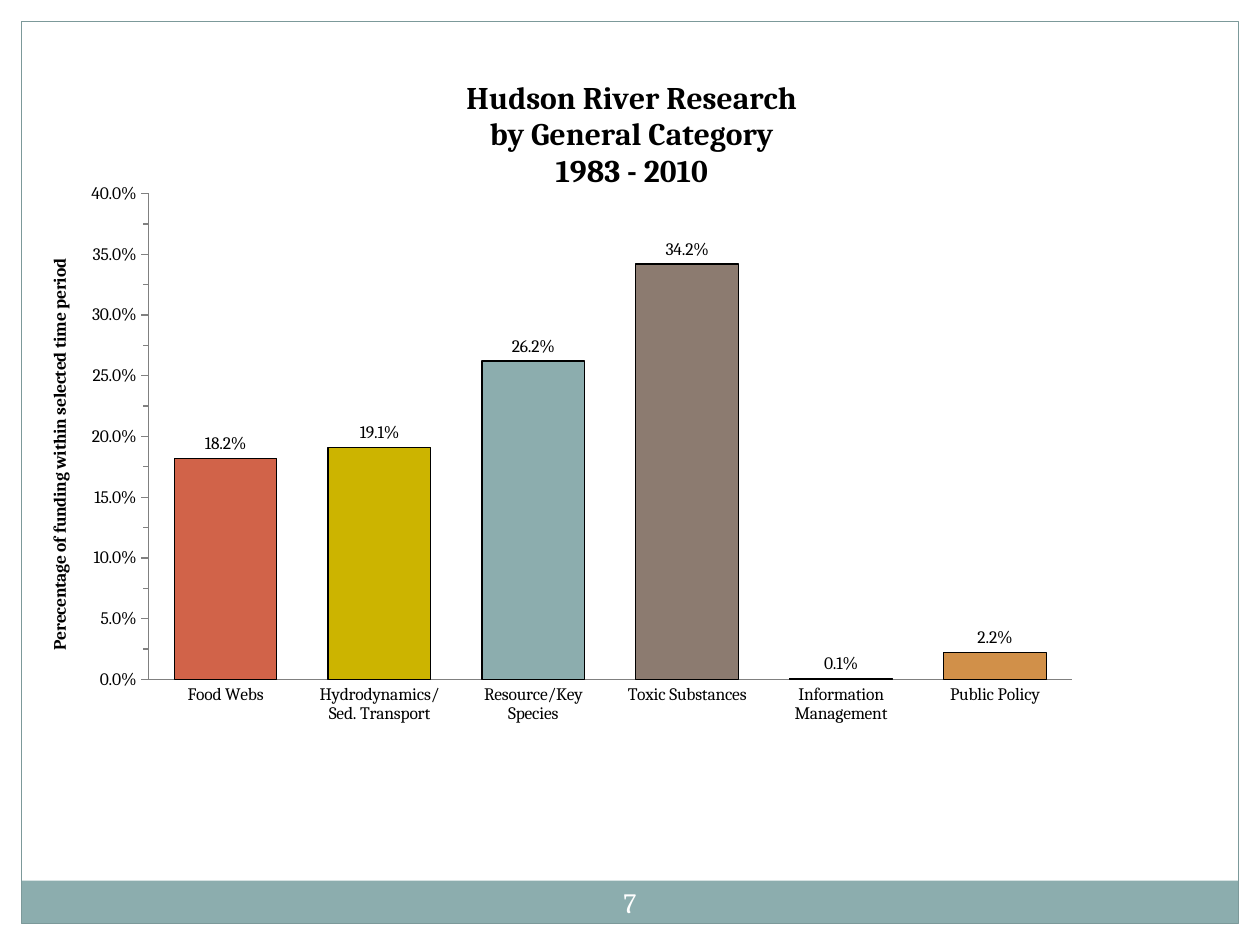
from dataclasses import dataclass

from lxml import etree
from pptx import Presentation
from pptx.chart.data import CategoryChartData
from pptx.dml.color import RGBColor
from pptx.enum.chart import XL_CHART_TYPE, XL_LABEL_POSITION, XL_TICK_MARK
from pptx.enum.shapes import MSO_SHAPE
from pptx.enum.text import MSO_ANCHOR, PP_ALIGN
from pptx.oxml.ns import qn
from pptx.util import Pt

COLUMNS = XL_CHART_TYPE.COLUMN_CLUSTERED
OUTSIDE_END = XL_LABEL_POSITION.OUTSIDE_END
TICK_OUT, TICK_NONE = XL_TICK_MARK.OUTSIDE, XL_TICK_MARK.NONE
RECTANGLE = MSO_SHAPE.RECTANGLE
MIDDLE, CENTER = MSO_ANCHOR.MIDDLE, PP_ALIGN.CENTER


@dataclass(frozen=True)
class Theme:
    font: str = "Cambria"
    white: str = "FFFFFF"
    black: str = "000000"
    band: str = "8CADAE"
    border: str = "7C999A"
    axis: str = "808080"
    title_size: int = 18
    body_size: int = 10
    number_size: int = 16
    line_width: float = 0.75


THEME = Theme()
WIDTH, HEIGHT, MARGIN = 720, 540, 12.24
PERCENT = "0.0%"
TITLE = "Hudson River Research\nby General Category\n1983 - 2010"
AXIS_TITLE = "Perecentage of funding within selected time period"
FUNDING = [  # category, share of funding, column colour
    ("Food Webs", 0.182, "D16349"),
    ("Hydrodynamics/Sed. Transport", 0.191, "CCB400"),
    ("Resource/Key Species", 0.262, "8CADAE"),
    ("Toxic Substances", 0.342, "8C7B70"),
    ("Information Management", 0.001, "8FB08C"),
    ("Public Policy", 0.022, "D19049"),
]


def rgb(value):
    return RGBColor.from_string(value)


def style_font(font, size, color, bold=False):
    font.color.rgb = rgb(color)
    for name, value in {"name": THEME.font, "size": Pt(size), "bold": bold}.items():
        setattr(font, name, value)


def style_line(line, color):
    line.color.rgb = rgb(color)
    line.width = Pt(THEME.line_width)


def add_rectangle(slide, box, fill=None, line=None):
    rectangle = slide.shapes.add_shape(RECTANGLE, *map(Pt, box))
    rectangle.shadow.inherit = False
    if fill:
        rectangle.fill.solid()
        rectangle.fill.fore_color.rgb = rgb(fill)
    else:
        rectangle.fill.background()
    if line:
        style_line(rectangle.line, line)
    else:
        rectangle.line.fill.background()


def add_frame(slide, box):
    """White margins, footer band and thin border."""
    left, top, width, height = box
    inner = (left + MARGIN, top + MARGIN, width - 2 * MARGIN, height - 2 * MARGIN)
    band_height = 24.5
    add_rectangle(slide, (left, top, width, MARGIN), THEME.white)
    for side in (left + width - MARGIN, left):
        add_rectangle(slide, (side, top, MARGIN, height), THEME.white)
    band_top = inner[1] + inner[3] - band_height
    add_rectangle(slide, (inner[0], band_top, inner[2], band_height), THEME.band)
    add_rectangle(slide, inner, line=THEME.border)


def set_layout(parent, index, **values):
    """Fix a chart part's place, in fractions of the chart."""
    for old in parent.findall(qn("c:layout")):
        parent.remove(old)
    layout = etree.Element(qn("c:layout"))
    manual = etree.SubElement(layout, qn("c:manualLayout"))
    for tag, value in values.items():
        etree.SubElement(manual, qn(f"c:{tag}")).set("val", str(value))
    parent.insert(index, layout)


def write_title(title, text, size, x, y):
    title.text_frame.text = text
    for paragraph in title.text_frame.paragraphs:
        style_font(paragraph.font, size, THEME.black, True)
        for run in paragraph.runs:
            style_font(run.font, size, THEME.black, True)
    set_layout(title._element, 1, xMode="edge", yMode="edge", x=x, y=y)


def add_funding_chart(slide, box):
    data = CategoryChartData(number_format=PERCENT)
    data.categories = [name for name, _, _ in FUNDING]
    data.add_series("Series 1", [share for _, share, _ in FUNDING])
    chart = slide.shapes.add_chart(COLUMNS, *map(Pt, box), data).chart
    chart.has_legend = False
    style_font(chart.font, THEME.body_size, THEME.black)
    write_title(chart.chart_title, TITLE, THEME.title_size, 0.36, 0.04)

    # Axes
    shares, categories = chart.value_axis, chart.category_axis
    shares_format = {
        "minimum_scale": 0, "maximum_scale": 0.4,
        "major_unit": 0.05, "minor_unit": 0.025,
        "has_major_gridlines": False,
        "major_tick_mark": TICK_OUT, "minor_tick_mark": TICK_OUT,
    }
    for name, value in shares_format.items():
        setattr(shares, name, value)
    shares.tick_labels.number_format = PERCENT
    shares.tick_labels.number_format_is_linked = False
    write_title(shares.axis_title, AXIS_TITLE, THEME.body_size, 0.01, 0.25)
    categories.major_tick_mark = TICK_NONE
    for axis in (shares, categories):
        style_line(axis.format.line, THEME.axis)

    # Columns and their labels
    plot = chart.plots[0]
    plot.gap_width = 50
    plot.vary_by_categories = False
    plot.has_data_labels = True
    labels_format = {
        "show_value": True, "number_format": PERCENT,
        "number_format_is_linked": False, "position": OUTSIDE_END,
    }
    for name, value in labels_format.items():
        setattr(plot.data_labels, name, value)
    style_font(plot.data_labels.font, THEME.body_size, THEME.black)
    for index, (_, _, color) in enumerate(FUNDING):
        column = plot.series[0].points[index].format
        column.fill.solid()
        column.fill.fore_color.rgb = rgb(color)
        style_line(column.line, THEME.black)

    plot_area = chart._chartSpace.find(".//" + qn("c:plotArea"))
    set_layout(plot_area, 0, layoutTarget="inner", xMode="edge", yMode="edge",
               x=0.097, y=0.178, w=0.773, h=0.561)


def add_page_number(slide, box, number):
    frame = slide.shapes.add_textbox(*map(Pt, box)).text_frame
    frame.word_wrap = True
    frame.vertical_anchor = MIDDLE
    for side in ("left", "top", "right", "bottom"):
        setattr(frame, f"margin_{side}", Pt(3.6))
    paragraph = frame.paragraphs[0]
    paragraph.alignment = CENTER
    run = paragraph.add_run()
    run.text = number
    style_font(run.font, THEME.number_size, THEME.white)


def main():
    deck = Presentation()
    deck.slide_width, deck.slide_height = Pt(WIDTH), Pt(HEIGHT)
    slide = deck.slides.add_slide(deck.slide_layouts[6])
    add_frame(slide, (0, 0, WIDTH, HEIGHT))
    add_funding_chart(slide, (18.75, 22.5, 682.5, 495))
    add_page_number(slide, (336, 498.25, 48, 34.5), "7")
    deck.save("out.pptx")


if __name__ == "__main__":
    main()
